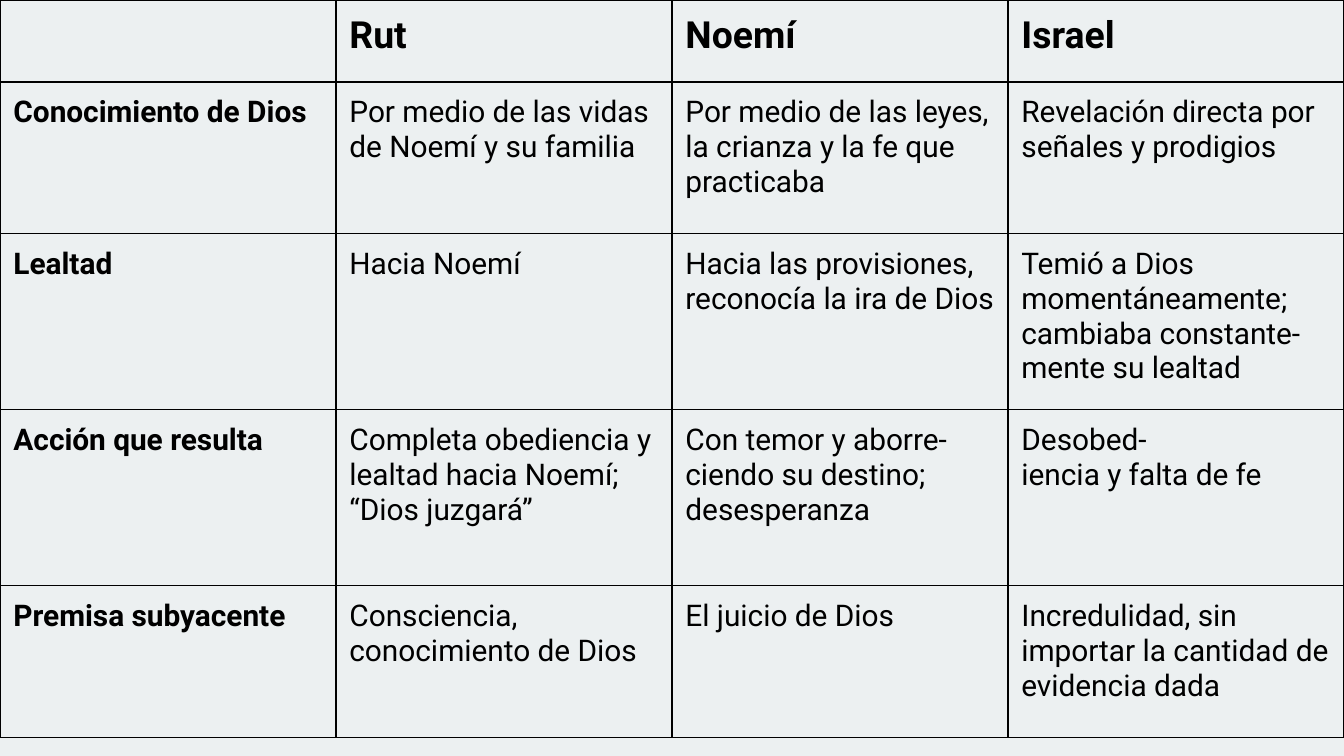
from lxml import etree
from pptx import Presentation
from pptx import util as u
from pptx.dml.color import RGBColor
from pptx.oxml.ns import qn

COLORS = {"background": "ECF0F1", "ink": "000000"}
ROW_HEIGHTS = [0.61, 1.13, 1.31, 1.31, 1.13]
ROWS = [
    ["", "Rut", "Noemí", "Israel"],
    ["Conocimiento de Dios",
     "Por medio de las vidas de Noemí y su familia",
     "Por medio de las leyes, la crianza y la fe que practicaba",
     "Revelación directa por señales y prodigios"],
    ["Lealtad",
     "Hacia Noemí",
     "Hacia las provisiones, reconocía la ira de Dios",
     "Temió a Dios momentáneamente; cambiaba constante-mente su lealtad"],
    ["Acción que resulta",
     "Completa obediencia y lealtad hacia Noemí; “Dios juzgará”",
     "Con temor y aborre-ciendo su destino; desesperanza",
     "Desobed-\viencia y falta de fe"],
    ["Premisa subyacente",
     "Consciencia, conocimiento de Dios",
     "El juicio de Dios",
     "Incredulidad, sin importar la cantidad de evidencia dada"],
]


def add_borders(cell):
    tc_pr = cell._tc.get_or_add_tcPr()
    for i, side in enumerate(("lnL", "lnR", "lnT", "lnB")):
        ln = etree.Element(qn(f"a:{side}"), w=str(u.Pt(0.75)))
        fill = etree.SubElement(ln, qn("a:solidFill"))
        etree.SubElement(fill, qn("a:srgbClr"), val=COLORS["ink"])
        tc_pr.insert(i, ln)


prs = Presentation()
prs.slide_width = u.Inches(10)
prs.slide_height = prs.slide_width * 9 // 16
s = prs.slides.add_slide(prs.slide_layouts[6])
s.background.fill.solid()
s.background.fill.fore_color.rgb = RGBColor.from_string(COLORS["background"])

n_rows, n_cols = len(ROWS), len(ROWS[0])
tbl = s.shapes.add_table(n_rows, n_cols, 0, 0, prs.slide_width,
                         u.Inches(sum(ROW_HEIGHTS))).table
tbl.first_row = tbl.horz_banding = False
for col in tbl.columns:
    col.width = prs.slide_width // n_cols

for i, (height, row) in enumerate(zip(ROW_HEIGHTS, ROWS)):
    tbl.rows[i].height = u.Inches(height)
    for j, words in enumerate(row):
        cell = tbl.cell(i, j)
        cell.fill.background()
        add_borders(cell)
        cell.margin_left = cell.margin_right = u.Inches(0.1)
        cell.margin_top = cell.margin_bottom = u.Inches(0.1)
        p = cell.text_frame.paragraphs[0]
        p.text = words
        p.font.name = "Roboto"
        p.font.size = u.Pt(20 if i == 0 else 16)
        p.font.bold = i == 0 or j == 0
        p.font.color.rgb = RGBColor.from_string(COLORS["ink"])

prs.save("out.pptx")
